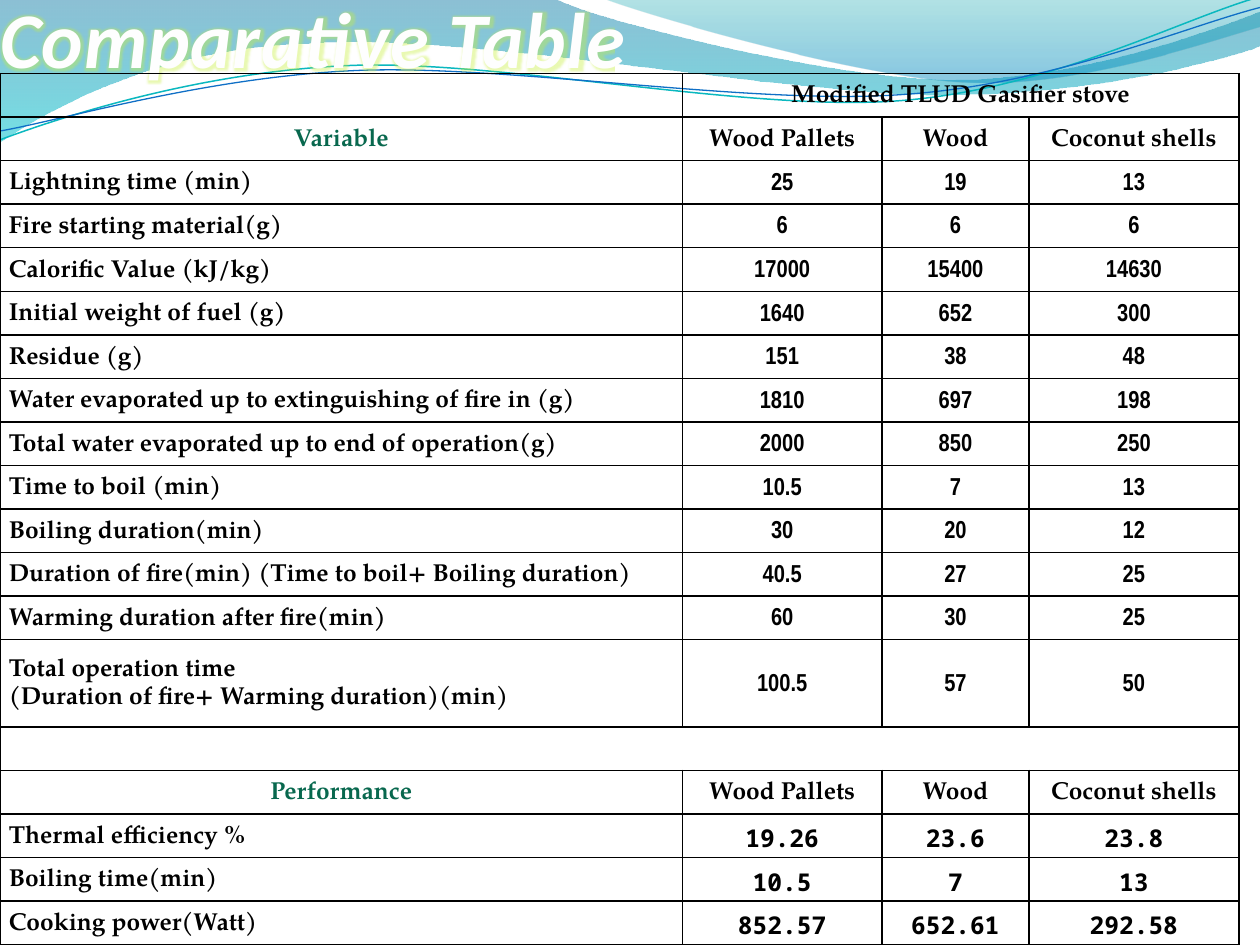
import math
import pptx
import pptx.util
import pptx.dml.color
import pptx.enum.text
import pptx.oxml
import pptx.oxml.ns

Inches, Pt = pptx.util.Inches, pptx.util.Pt
RGB = pptx.dml.color.RGBColor
ALIGN = pptx.enum.text.PP_ALIGN
ANCHOR = pptx.enum.text.MSO_ANCHOR

BLACK = RGB(0x00, 0x00, 0x00)
GREEN = RGB(0x08, 0x68, 0x4E)
WHITE = RGB(0xFE, 0xFE, 0xFE)
TEAL = RGB(0x0A, 0xB8, 0xBF)
BLUE = RGB(0x0F, 0x6F, 0xC6)
DEEP = RGB(0x00, 0x74, 0xA1)
CYAN = RGB(0x00, 0xC6, 0xCF)
SEA = RGB(0x00, 0xA1, 0xA9)
SKY = RGB(0x00, 0x8B, 0xBF)
LIME = RGB(0x9B, 0xBB, 0x37)
GLOW = RGB(0xC8, 0xF0, 0x40)
SERIF, NARROW, MONO = "TeX Gyre Pagella", "Arial Narrow", "Noto Sans Mono"
NS = pptx.oxml.ns.nsdecls("a")
qn = pptx.oxml.ns.qn


def outline(shapes, start, segs, close):
    """Freeform of lines (2 numbers) and Bezier curves (6 numbers), in inches."""
    form = shapes.build_freeform(Inches(start[0]), Inches(start[1]))
    for seg in segs:
        pts = [(Inches(x), Inches(y)) for x, y in zip(seg[::2], seg[1::2])]
        form.add_line_segments(pts, close=False)
    shape = form.convert_to_shape()
    shape.shadow.inherit = False
    # Turn each run of three points into one curve
    track = next(shape._element.iter(qn("a:path")))
    lines = iter(track.findall(qn("a:lnTo")))
    for seg in segs:
        line = next(lines)
        if len(seg) == 6:
            bend = pptx.oxml.parse_xml(f"<a:cubicBezTo {NS}/>")
            track.replace(line, bend)
            bend.append(line[0])
            for _ in range(2):
                line = next(lines)
                bend.append(line[0])
                track.remove(line)
    if close:
        track.append(pptx.oxml.parse_xml(f"<a:close {NS}/>"))
    return shape


prs = pptx.Presentation()
prs.slide_width, prs.slide_height = Inches(10), Inches(7.5)
slide = prs.slides.add_slide(prs.slide_layouts[5])

# Waves: start, segments, gradient stops (position, colour, opacity)
waves = [
    ((0, 0), [(4.4, -0.01), (4.76, 0.17, 6.64, 0.63, 7.58, 0.63),
              (8.53, 0.63, 9.58, 0.26, 10, 0.09), (10.01, 0.36),
              (9.83, 0.44, 8.7, 0.76, 7.46, 0.75),
              (6.22, 0.75, 3.82, 0.28, 2.57, 0.34),
              (1.29, 0.36, 0.46, 0.83, -0.01, 1.13), (0, 0)],
     [(0, DEEP, 45), (1, CYAN, 55)]),
    ((4.79, -0.01), [(5.09, 0.11, 6.82, 0.62, 7.69, 0.65),
                     (8.56, 0.69, 9.61, 0.32, 10, 0.21), (10, 0), (4.79, -0.01)],
     [(0, SEA, 30), (0.8, SKY, 45)]),
]
for start, segs, stops in waves:
    wave = outline(slide.shapes, start, segs, True)
    wave.line.fill.background()
    wave.fill.gradient()
    wave.fill.gradient_angle = 270
    for stop, (pos, color, _) in zip(wave.fill.gradient_stops, stops):
        stop.position = pos
        stop.color.rgb = color
    tints = wave._element.spPr.iter(qn("a:srgbClr"))
    for tint, (_, _, alpha) in zip(tints, stops):
        tint.append(pptx.oxml.parse_xml(f'<a:alpha {NS} val="{alpha * 1000}"/>'))

# Thin curves, drawn level about their middle and then tilted
TILT = 2.7
cos, sin = math.cos(math.radians(TILT)), math.sin(math.radians(TILT))
curves = [
    ((0, 1.11, 2.77, 0.52), (0.48, 0.93, 1.58, 0.57, 2.77, 0.52),
     (3.95, 0.47, 5.93, 0.89, 7.13, 0.8), (8.33, 0.71, 9.38, 0.15, 9.98, -0.02),
     (4.99, 0.57), TEAL, 0.85),
    ((0, 1.04, 2.83, 0.56), (0.47, 0.96, 1.64, 0.61, 2.83, 0.56),
     (4.03, 0.51, 5.97, 0.84, 7.17, 0.75), (8.36, 0.67, 9.41, 0.21, 10, 0.06),
     (5, 0.59), BLUE, 0.75),
]
for start, *bends, (midx, midy), color, width in curves:
    level = []
    for seg in (start[:2], *bends):
        flat = []
        for x, y in zip(seg[::2], seg[1::2]):
            dx, dy = x - midx, y - midy
            flat += [midx + dx * cos - dy * sin, midy + dx * sin + dy * cos]
        level.append(flat)
    curve = outline(slide.shapes, level[0], level[1:], False)
    curve.rotation = 360 - TILT
    curve.fill.background()
    curve.line.color.rgb = color
    curve.line.width = Pt(width)

# Title, in front of the waves
title = slide.shapes.title
slide.shapes._spTree.append(title._element)
place = {"left": 0, "top": -0.25, "width": 9, "height": 0.92}
for name, value in place.items():
    setattr(title, name, Inches(value))
frame = title.text_frame
frame.text = "Comparative Table"
inset = {"margin_left": 0, "margin_top": Inches(0.05), "margin_right": 0, "margin_bottom": 0,
         "vertical_anchor": ANCHOR.BOTTOM, "word_wrap": True}
for name, value in inset.items():
    setattr(frame, name, value)
frame.paragraphs[0].alignment = ALIGN.LEFT
run = frame.paragraphs[0].runs[0]
for name, value in {"size": Pt(45), "name": "Calibri", "bold": True, "italic": True}.items():
    setattr(run.font, name, value)
run.font.color.rgb = WHITE
props = run._r.get_or_add_rPr()
props.set("spc", "50")
props.insert(0, pptx.oxml.parse_xml(
    f'<a:ln {NS} w="12700"><a:solidFill><a:srgbClr val="{LIME}"/></a:solidFill></a:ln>'))
props.insert(2, pptx.oxml.parse_xml(
    f'<a:effectLst {NS}><a:glow rad="63500"><a:srgbClr val="{GLOW}">'
    '<a:alpha val="40000"/></a:srgbClr></a:glow></a:effectLst>'))

# Table contents
fuels = ("Wood Pallets", "Wood", "Coconut shells")
rows = [
    ("", "Modified TLUD Gasifier stove", "", ""),
    ("Variable", *fuels),
    ("Lightning time (min)", "25", "19", "13"),
    ("Fire starting material(g)", "6", "6", "6"),
    ("Calorific Value (kJ/kg)", "17000", "15400", "14630"),
    ("Initial weight of fuel (g)", "1640", "652", "300"),
    ("Residue (g)", "151", "38", "48"),
    ("Water evaporated up to extinguishing of fire in (g)", "1810", "697", "198"),
    ("Total water evaporated up to end of operation(g)", "2000", "850", "250"),
    ("Time to boil (min)", "10.5", "7", "13"),
    ("Boiling duration(min)", "30", "20", "12"),
    ("Duration of fire(min) (Time to boil+ Boiling duration)", "40.5", "27", "25"),
    ("Warming duration after fire(min)", "60", "30", "25"),
    ("Total operation time\n(Duration of fire+ Warming duration)(min)", "100.5", "57", "50"),
    ("", "", "", ""),
    ("Performance", *fuels),
    ("Thermal efficiency %", "19.26", "23.6", "23.8"),
    ("Boiling time(min)", "10.5", "7", "13"),
    ("Cooking power(Watt)", "852.57", "652.61", "292.58"),
]
TOTAL, GAP, HEADS = 13, 14, (0, 1, 15)

# Table, on a grid of twelfths of an inch, down to the slide's foot
top, wide = 7 / 12, (65, 19, 14, 20)
tall = 7.5 - top
unit = tall / (len(rows) + 1)
table = slide.shapes.add_table(len(rows), 4, 0, Inches(top), Inches(sum(wide) / 12),
                               Inches(tall)).table
table.first_row = table.horz_banding = False
for col, width in zip(table.columns, wide):
    col.width = Inches(width / 12)
pad = {"margin_left": Inches(0.07), "margin_right": Inches(0.07), "margin_top": 0,
       "margin_bottom": 0, "vertical_anchor": ANCHOR.MIDDLE}
for r, texts in enumerate(rows):
    table.rows[r].height = Inches(unit * (2 if r == TOTAL else 1))
    for c, text in enumerate(texts):
        cell = table.cell(r, c)
        if text:
            cell.text = text
        for name, value in pad.items():
            setattr(cell, name, value)
        head = r in HEADS
        face = SERIF if head or c == 0 else NARROW if r < GAP else MONO
        for para in cell.text_frame.paragraphs:
            para.alignment = ALIGN.CENTER if head or c else ALIGN.LEFT
            para.line_spacing = 1.15
            for run in para.runs:
                for name, value in {"size": Pt(14), "name": face, "bold": True}.items():
                    setattr(run.font, name, value)
                run.font.color.rgb = GREEN if head and c == 0 else BLACK
        cell.fill.background()
        for i, side in enumerate(("lnL", "lnR", "lnT", "lnB")):
            cell._tc.get_or_add_tcPr().insert(i, pptx.oxml.parse_xml(
                f'<a:{side} {NS} w="12700"><a:solidFill><a:srgbClr val="{BLACK}"/>'
                f'</a:solidFill></a:{side}>'))
table.cell(0, 1).merge(table.cell(0, 3))
table.cell(GAP, 0).merge(table.cell(GAP, 3))

prs.save("out.pptx")
